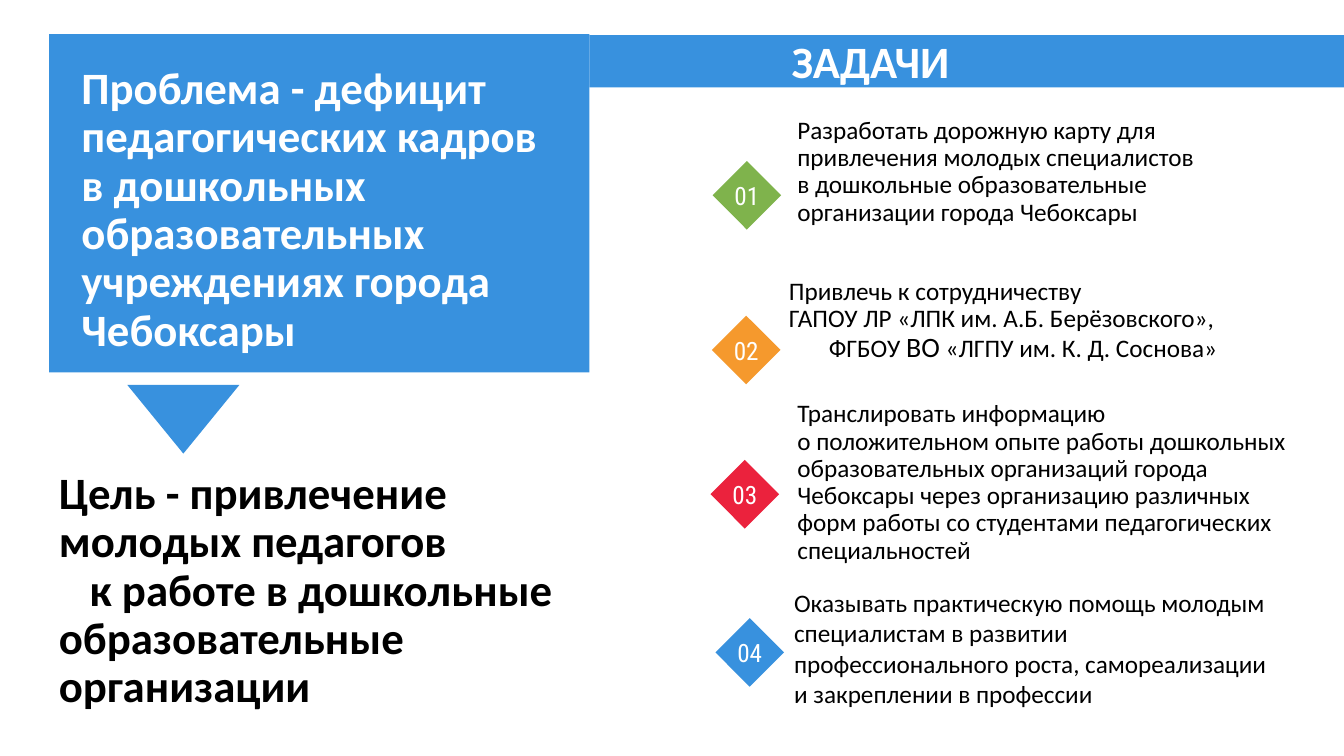
import pptx
import pptx.util
import pptx.dml.color
import pptx.enum.shapes
import pptx.enum.text

Pt = pptx.util.Pt
RGB = pptx.dml.color.RGBColor.from_string
SHAPE = pptx.enum.shapes.MSO_SHAPE
ANCHOR = pptx.enum.text.MSO_ANCHOR
ALIGN = pptx.enum.text.PP_ALIGN

THEME = {
    "blue": "3891DE", "green": "7FB34C", "orange": "F5992D", "red": "EB223D",
    "white": "FFFFFF", "black": "000000",
    "heading": 32, "accent": 20, "body": 18,
    "font": "Calibri", "number_font": "Roboto Condensed",
}


def write(p, text, size="body", color="black", font="font", bold=False,
          align=ALIGN.LEFT, spacing=0.9, indent=0):
    """Append text to a paragraph; a newline becomes a line break."""
    p.alignment, p.line_spacing, p.space_before = align, spacing, Pt(0)
    pPr = p._p.get_or_add_pPr()
    pPr.set("marL", "0")
    pPr.set("indent", str(Pt(indent)))
    for i, line in enumerate(text.split("\n")):
        if i:
            p.add_line_break()
        r = p.add_run()
        r.text = line
        r.font.size, r.font.bold = Pt(THEME[size]), bold
        r.font.name = THEME[font]
        r.font.color.rgb = RGB(THEME[color])


def add_shape(s, kind, x, y, w, h, color):
    sp = s.shapes.add_shape(kind, Pt(x), Pt(y), Pt(w), Pt(h))
    sp.shadow.inherit = False
    sp.fill.solid()
    sp.fill.fore_color.rgb = RGB(THEME[color])
    sp.line.fill.background()
    return sp


prs = pptx.Presentation()
prs.slide_width, prs.slide_height = Pt(960), Pt(540)
s = prs.slides.add_slide(prs.slide_layouts[1])
title, body = s.placeholders

# Problem: blue panel behind the title
panel = add_shape(s, SHAPE.RECTANGLE, 35, 24.5, 386, 241.5, "blue")
title._element.addprevious(panel._element)
title.left, title.top, title.width, title.height = Pt(51), Pt(41), Pt(347), Pt(219)
tf = title.text_frame
tf.auto_size, tf.vertical_anchor = pptx.enum.text.MSO_AUTO_SIZE.NONE, ANCHOR.MIDDLE
write(tf.paragraphs[0], "Проблема - дефицит педагогических кадров в дошкольных "
      "образовательных учреждениях города Чебоксары",
      size="heading", color="white", bold=True)

# Goal: arrow and text under the panel
add_shape(s, SHAPE.FLOWCHART_MERGE, 91, 275, 80, 49, "blue")
tf = s.shapes.add_textbox(Pt(35), Pt(332.5), Pt(386), Pt(193)).text_frame
tf.word_wrap = True
write(tf.paragraphs[0], "Цель - привлечение молодых педагогов", size="heading", bold=True)
write(tf.add_paragraph(), "к работе в дошкольные образовательные организации",
      size="heading", bold=True, indent=22)

# Tasks header
header = add_shape(s, SHAPE.RECTANGLE, 421, 25, 539, 37.5, "blue")
tf = header.text_frame
tf.margin_left, tf.vertical_anchor = Pt(144.5), ANCHOR.TOP
write(tf.paragraphs[0], "ЗАДАЧИ", size="heading", color="white", bold=True)

# Numbered diamonds
diamonds = [(509, 115, "green"), (508.5, 225.5, "orange"),
            (507.5, 328.5, "red"), (511, 441.5, "blue")]
for n, (x, y, color) in enumerate(diamonds, 1):
    sp = add_shape(s, SHAPE.DIAMOND, x, y, 49, 49, color)
    tf = sp.text_frame
    tf.margin_left = tf.margin_right = tf.margin_top = tf.margin_bottom = 0
    tf.word_wrap, tf.vertical_anchor = False, ANCHOR.MIDDLE
    write(tf.paragraphs[0], f"{n:02}", color="white", font="number_font",
          align=ALIGN.CENTER, spacing=1)

# Tasks 1 to 3: left, top, width, height, text
tasks = [
    (562.5, 80.5, 352, 102, "Разработать дорожную карту для привлечения молодых специалистов\n"
     "в дошкольные образовательные организации города Чебоксары"),
    (556.5, 195.5, 344, 73, "Привлечь к сотрудничеству\nГАПОУ ЛР «ЛПК им. А.Б. Берёзовского»,"),
    (562.5, 283, 376, 119, "Транслировать информацию\n"
     "о положительном опыте работы дошкольных образовательных организаций города "
     "Чебоксары через организацию различных форм работы со студентами "
     "педагогических специальностей"),
]
frames = []
for x, y, w, h, text in tasks:
    tf = s.shapes.add_textbox(Pt(x), Pt(y), Pt(w), Pt(h)).text_frame
    tf.word_wrap = True
    write(tf.paragraphs[0], text)
    frames.append(tf)

# Second partner of task 2, indented
p = frames[1].add_paragraph()
for text, size in [("ФГБОУ ", "body"), ("ВО", "accent"),
                   (" «ЛГПУ им. К. Д. Соснова»", "body")]:
    write(p, text, size=size, indent=28.5)

# Task 4 in the body placeholder, without a bullet
body.left, body.top, body.width, body.height = Pt(560), Pt(416), Pt(353), Pt(100)
tf = body.text_frame
tf.auto_size = pptx.enum.text.MSO_AUTO_SIZE.NONE
p = tf.paragraphs[0]
write(p, "Оказывать практическую помощь молодым специалистам в развитии\n"
      "профессионального роста, самореализации\nи закреплении в профессии", spacing=1)
p._p.get_or_add_pPr().append(pptx.oxml.parse_xml(
    '<a:buNone xmlns:a="http://schemas.openxmlformats.org/drawingml/2006/main"/>'))

prs.save("out.pptx")
